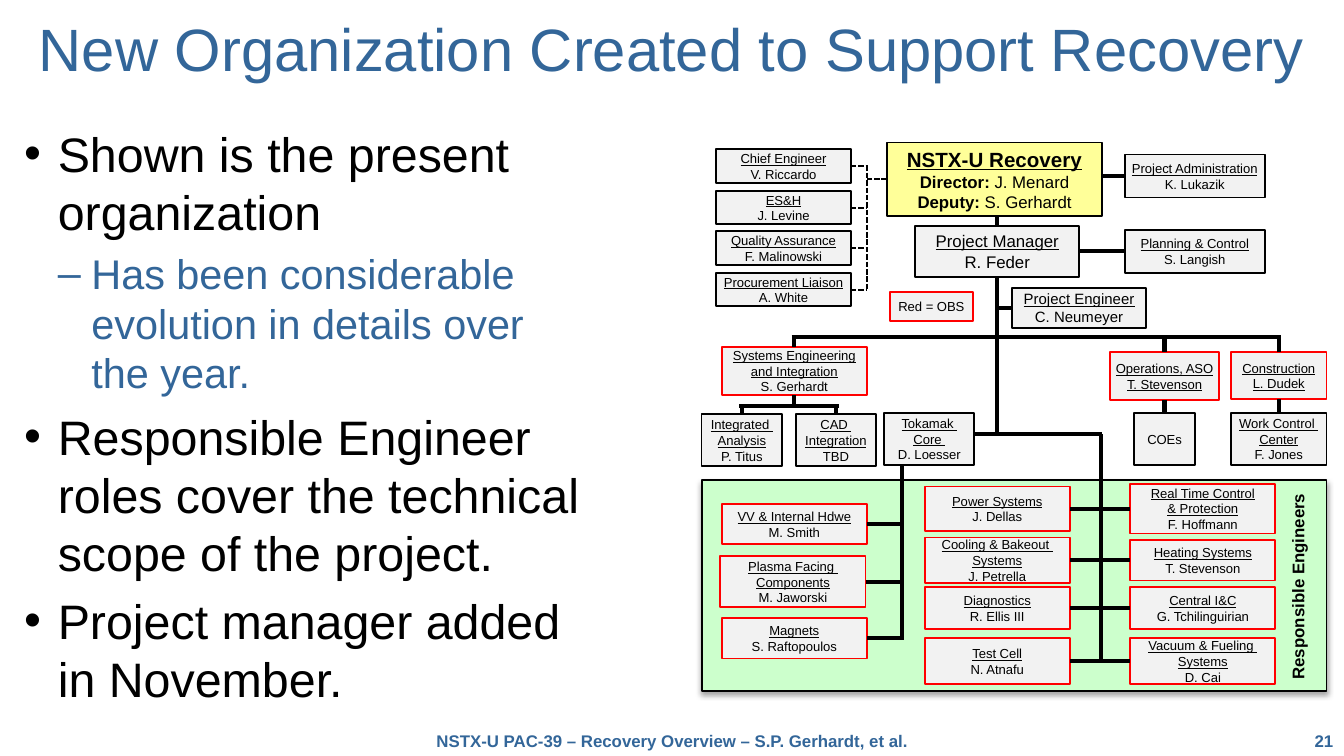
from dataclasses import dataclass
from typing import NamedTuple, Optional

from lxml import etree
from pptx import Presentation
from pptx.dml.color import RGBColor
from pptx.enum.dml import MSO_LINE
from pptx.enum.shapes import MSO_CONNECTOR, MSO_SHAPE
from pptx.enum.text import MSO_ANCHOR, MSO_AUTO_SIZE, PP_ALIGN
from pptx.oxml.ns import qn
from pptx.util import Inches, Pt

BLACK = RGBColor(0, 0, 0)
RED = RGBColor(0xFF, 0, 0)
BLUE = RGBColor(0x33, 0x66, 0x99)
GREY = RGBColor(0xF2, 0xF2, 0xF2)
GREEN = RGBColor(0xCC, 0xFF, 0xCC)
YELLOW = RGBColor(0xFF, 0xFF, 0x99)
RECT = MSO_SHAPE.RECTANGLE
STRAIGHT = MSO_CONNECTOR.STRAIGHT
DASH = MSO_LINE.SQUARE_DOT
CENTER, RIGHT = PP_ALIGN.CENTER, PP_ALIGN.RIGHT
MIDDLE, FIXED = MSO_ANCHOR.MIDDLE, MSO_AUTO_SIZE.NONE
TOP, LEFT, BOTTOM, EAST = 0, 1, 2, 3
FONT = "Arial"
WIDTH = Inches(10)
HEIGHT = WIDTH * 9 // 16


class Run(NamedTuple):
    text: str
    size: float = 7
    bold: bool = False
    under: bool = False


@dataclass
class Box:
    x: float
    y: float
    w: float
    h: float
    heads: tuple
    foot: str = ""
    edge: RGBColor = BLACK
    size: float = 7

    def rows(self) -> list:
        lines = [[Run(head, self.size, under=True)] for head in self.heads]
        return lines + ([[Run(self.foot, self.size)]] if self.foot else [])


class Tie(NamedTuple):
    box: str
    side: int
    to: float = 0
    mate: Optional[str] = None
    dash: bool = False


class Wire(NamedTuple):
    x1: float
    y1: float
    x2: float
    y2: float
    dash: bool = False


BOXES = {
    "chief": Box(5.33, 1.11, 1, 0.25, ("Chief Engineer",), "V. Riccardo"),
    "safety": Box(5.33, 1.42, 1, 0.25, ("ES&H",), "J. Levine"),
    "quality": Box(5.33, 1.72, 1, 0.25, ("Quality Assurance",), "F. Malinowski"),
    "buyer": Box(5.33, 2.03, 1, 0.25, ("Procurement Liaison",), "A. White"),
    "admin": Box(8.37, 1.15, 1.04, 0.32, ("Project Administration",), "K. Lukazik"),
    "plan": Box(8.37, 1.71, 1.04, 0.32, ("Planning & Control",), "S. Langish"),
    "lead": Box(6.81, 1.68, 1.22, 0.38, ("Project Manager",), "R. Feder", size=9),
    "tech": Box(7.53, 2.14, 1, 0.3, ("Project Engineer",), "C. Neumeyer", size=8),
    "key": Box(6.62, 2.17, 0.62, 0.22, (), "Red = OBS", RED),
    "systems": Box(5.37, 2.58, 1.08, 0.36, ("Systems Engineering", "and Integration"), "S. Gerhardt", RED),
    "ops": Box(8.26, 2.62, 0.81, 0.36, ("Operations, ASO", "T. Stevenson"), edge=RED),
    "build": Box(9.16, 2.62, 0.71, 0.35, ("Construction", "L. Dudek"), edge=RED),
    "study": Box(5.22, 3.08, 0.6, 0.39, ("Integrated ", "Analysis"), "P. Titus"),
    "cad": Box(5.92, 3.08, 0.6, 0.39, ("CAD ", "Integration"), "TBD"),
    "core": Box(6.58, 3.07, 0.67, 0.39, ("Tokamak ", "Core "), "D. Loesser"),
    "coes": Box(8.44, 3.07, 0.45, 0.39, (), "COEs"),
    "work": Box(9.16, 3.07, 0.71, 0.39, ("Work Control ", "Center"), "F. Jones"),
    "vessel": Box(5.37, 3.75, 1.08, 0.3, ("VV & Internal Hdwe",), "M. Smith", RED),
    "plasma": Box(5.36, 4.14, 1.08, 0.38, ("Plasma Facing ", "Components"), "M. Jaworski", RED),
    "magnets": Box(5.37, 4.6, 1.08, 0.3, ("Magnets",), "S. Raftopoulos", RED),
    "power": Box(6.88, 3.62, 1.08, 0.33, ("Power Systems",), "J. Dellas", RED),
    "cooling": Box(6.88, 4, 1.08, 0.34, ("Cooling & Bakeout ", "Systems"), "J. Petrella", RED),
    "sensors": Box(6.88, 4.37, 1.08, 0.31, ("Diagnostics",), "R. Ellis III", RED),
    "test": Box(6.88, 4.75, 1.08, 0.34, ("Test Cell",), "N. Atnafu", RED),
    "control": Box(8.41, 3.6, 1.08, 0.37, ("Real Time Control", "& Protection"), "F. Hoffmann", RED),
    "heating": Box(8.41, 4.02, 1.08, 0.3, ("Heating Systems",), "T. Stevenson", RED),
    "central": Box(8.41, 4.37, 1.08, 0.31, ("Central I&C",), "G. Tchilinguirian", RED),
    "vacuum": Box(8.41, 4.75, 1.08, 0.34, ("Vacuum & Fueling ", "Systems"), "D. Cai", RED),
}
TIES = [
    *(Tie(name, EAST, 6.45, dash=True) for name in ("chief", "safety", "quality", "buyer")),
    Tie("head", LEFT, 6.45, dash=True),
    Tie("admin", LEFT, 8.2),
    Tie("plan", LEFT, mate="lead"),
    Tie("lead", TOP, 1.61),
    Tie("lead", BOTTOM, 3.24),
    Tie("tech", LEFT, 7.42),
    *(Tie(name, TOP, 2.51) for name in ("systems", "ops", "build")),
    Tie("systems", BOTTOM, 3.02),
    *(Tie(name, TOP, 3.02) for name in ("study", "cad")),
    Tie("ops", BOTTOM, mate="coes"),
    Tie("build", BOTTOM, mate="work"),
    *(Tie(name, EAST, 6.71) for name in ("vessel", "plasma", "magnets")),
    *(Tie(a, EAST, mate=b) for a, b in (("power", "control"), ("cooling", "heating"),
                                        ("sensors", "central"), ("test", "vacuum"))),
]
WIRES = [
    Wire(6.45, 1.23, 6.45, 2.16, True),
    Wire(5.89, 2.51, 9.53, 2.51),
    Wire(5.5, 3.02, 6.24, 3.02),
    Wire(7.25, 3.23, 8.2, 3.23),
    Wire(8.19, 3.23, 8.19, 4.92),
    Wire(6.71, 3.46, 6.71, 4.76),
]
POINTS = [
    (0, "Shown is the present organization"),
    (1, "Has been considerable evolution in details over the year."),
    (0, "Responsible Engineer roles cover the technical scope of the project."),
    (0, "Project manager added in November."),
]


def style(item, **values) -> None:
    for name, value in values.items():
        setattr(item, name, value)


def write(frame, rows: list, color=BLACK, align=CENTER) -> None:
    for i, row in enumerate(rows):
        para = frame.paragraphs[0] if i == 0 else frame.add_paragraph()
        para.alignment = align
        for run in row:
            piece = para.add_run()
            piece.text = run.text
            style(piece.font, name=FONT, size=Pt(run.size), bold=run.bold, underline=run.under)
            piece.font.color.rgb = color


def place(shape, x: float, y: float, w: float, h: float) -> None:
    style(shape, left=Inches(x), top=Inches(y), width=Inches(w), height=Inches(h))


def draw_rect(slide, x, y, w, h, fill, edge, rows=(), wrap=False):
    shape = slide.shapes.add_shape(RECT, *map(Inches, (x, y, w, h)))
    shape.shadow.inherit = False
    shape.fill.solid()
    shape.fill.fore_color.rgb = fill
    shape.line.color.rgb = edge
    shape.line.width = Pt(1)
    style(shape.text_frame, word_wrap=wrap, vertical_anchor=MIDDLE)
    write(shape.text_frame, rows)
    return shape


def draw_label(slide, x, y, w, h, text, color, align=CENTER):
    label = slide.shapes.add_textbox(*map(Inches, (x, y, w, h)))
    style(label.text_frame, word_wrap=True, margin_left=0, margin_right=0,
          margin_top=Inches(0.04), margin_bottom=Inches(0.04))
    write(label.text_frame, [[Run(text, 9, True)]], color, align)
    return label


def draw_wire(slide, wire: Wire):
    line = slide.shapes.add_connector(STRAIGHT, *map(Inches, wire[:4]))
    line.line.color.rgb = BLACK
    line.line.width = Pt(1 if wire.dash else 2.25)
    if wire.dash:
        line.line.dash_style = DASH
    etree.SubElement(line._element.spPr, qn("a:effectLst"))
    return line


def draw_tie(slide, tie: Tie, boxes: dict) -> None:
    box = boxes[tie.box]
    x = (box.left + box.width * {LEFT: 0, EAST: 1}.get(tie.side, 0.5)) / Inches(1)
    y = (box.top + box.height * {TOP: 0, BOTTOM: 1}.get(tie.side, 0.5)) / Inches(1)
    end = (tie.to, y) if tie.side in (LEFT, EAST) else (x, tie.to)
    line = draw_wire(slide, Wire(x, y, *end, tie.dash))
    line.begin_connect(box, tie.side)
    if tie.mate:
        line.end_connect(boxes[tie.mate], (tie.side + 2) % 4)


def cast_shade(shape) -> None:
    effects = shape._element.spPr.find(qn("a:effectLst"))
    shade = etree.SubElement(effects, qn("a:outerShdw"), blurRad=str(Pt(3.1)),
                             dist=str(Pt(1.8)), dir="5400000", rotWithShape="0")
    tint = etree.SubElement(shade, qn("a:srgbClr"), val=str(BLACK))
    etree.SubElement(tint, qn("a:alpha"), val="35000")


def fill_body(body) -> None:
    place(body, 0.08, 0.87, 4.42, 4.44)
    style(body.text_frame, word_wrap=True, auto_size=FIXED)
    for i, (level, text) in enumerate(POINTS):
        para = body.text_frame.paragraphs[0] if i == 0 else body.text_frame.add_paragraph()
        size = 22.2 if level else 25.9
        style(para, text=text, level=level, line_spacing=1.0, space_before=Pt(size * 0.2 if i else 0))
        props = para._p.get_or_add_pPr()
        props.set("marL", str(Inches(0.25 * (level + 1))))
        props.set("indent", str(Inches(-0.25)))
        etree.SubElement(props, qn("a:buChar"), char="–" if level else "•")
        style(para.font, name=FONT, size=Pt(size))
        para.font.color.rgb = BLUE if level else BLACK


def main() -> None:
    deck = Presentation()
    style(deck, slide_width=WIDTH, slide_height=HEIGHT)
    slide = deck.slides.add_slide(deck.slide_layouts[1])
    title = slide.shapes.title
    place(title, 0, 0, 10, 0.79)
    style(title.text_frame, word_wrap=True, auto_size=FIXED, vertical_anchor=MIDDLE,
          margin_left=Inches(0.05), margin_right=Inches(0.05))
    write(title.text_frame, [[Run("New Organization Created to Support Recovery", 32)]], BLUE)
    title.text_frame.paragraphs[0].line_spacing = 0.85
    fill_body(slide.placeholders[1])

    cast_shade(draw_rect(slide, 5.22, 3.57, 4.65, 1.57, GREEN, BLACK))
    draw_label(slide, 8.87, 4.24, 1.59, 0.25, "Responsible Engineers", BLACK).rotation = 270
    boxes = {name: draw_rect(slide, box.x, box.y, box.w, box.h, GREY, box.edge, box.rows())
             for name, box in BOXES.items()}
    boxes["head"] = draw_rect(slide, 6.6, 1.06, 1.6, 0.55, YELLOW, BLACK, [
        [Run("NSTX-U Recovery", 11, True, True)],
        [Run("Director: ", 9, True), Run("J. Menard", 9)],
        [Run("Deputy: ", 9, True), Run("S. Gerhardt", 9)],
    ], True)
    for tie in TIES:
        draw_tie(slide, tie, boxes)
    for wire in WIRES:
        draw_wire(slide, wire)

    draw_label(slide, 1, 5.4, 8, 0.23, "NSTX-U PAC-39 – Recovery Overview – S.P. Gerhardt, et al.", BLUE)
    draw_label(slide, 9.25, 5.4, 0.67, 0.23, "21", BLUE, RIGHT)
    deck.save("out.pptx")


if __name__ == "__main__":
    main()
